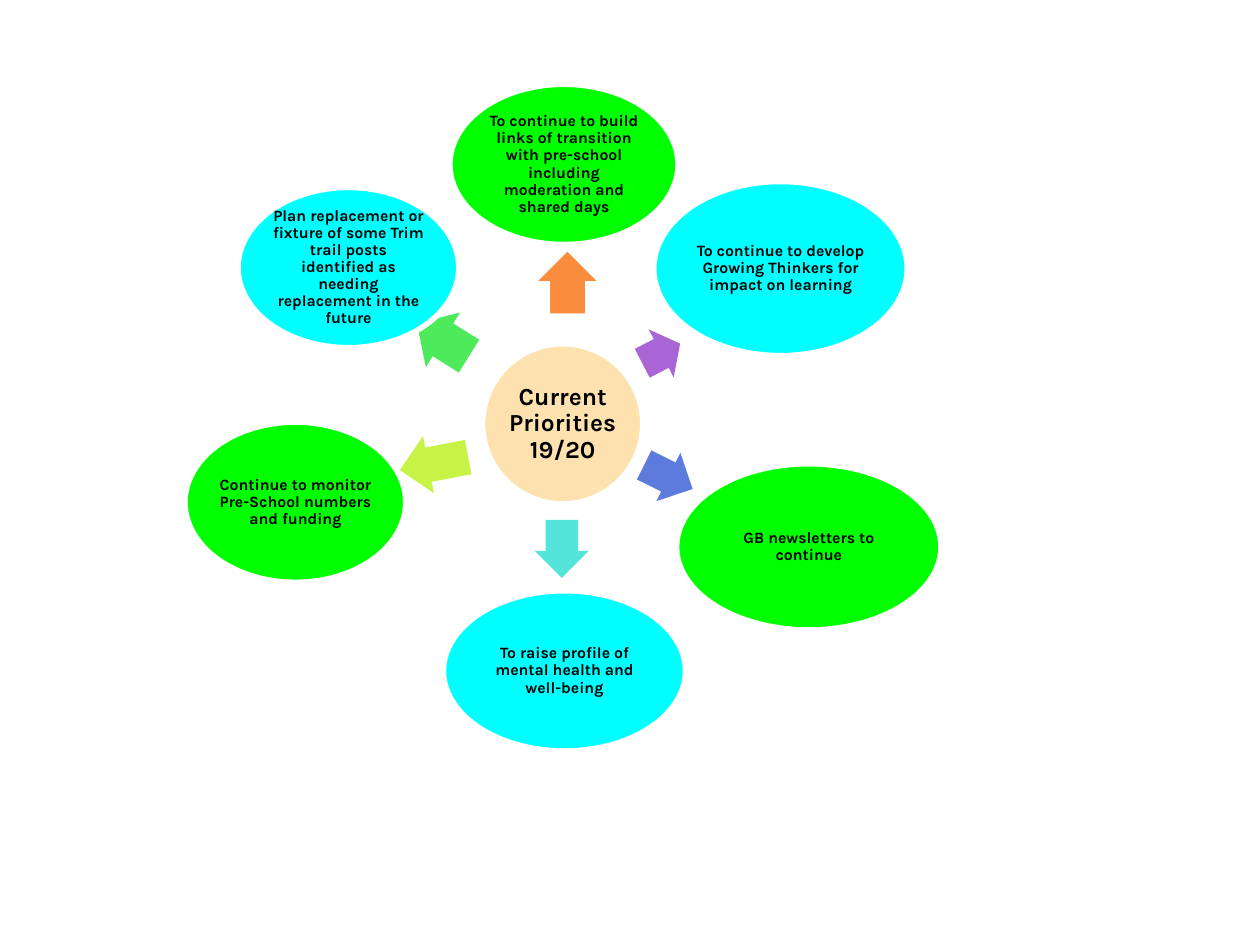
from dataclasses import dataclass

from pptx import Presentation
from pptx.dml.color import RGBColor
from pptx.enum.shapes import MSO_SHAPE
from pptx.enum.text import MSO_ANCHOR, PP_ALIGN
from pptx.util import Cm, Pt

ELLIPSE = MSO_SHAPE.OVAL
ARROW = MSO_SHAPE.RIGHT_ARROW
MIDDLE = MSO_ANCHOR.MIDDLE
CENTER = PP_ALIGN.CENTER


@dataclass(frozen=True)
class Theme:
    font: str = "Karla"
    text: str = "000000"
    outline: str = "FFFFFF"
    hub: str = "FDE2B0"
    green: str = "00FF00"
    cyan: str = "00FFFF"
    orange_arrow: str = "FA8D3D"
    purple_arrow: str = "A965D6"
    blue_arrow: str = "5D7BDD"
    teal_arrow: str = "55E4DA"
    lime_arrow: str = "C6F345"
    green_arrow: str = "4DEB5C"
    hub_size: int = 14
    priority_size: int = 9
    outline_width: float = 3.15
    line_spacing: float = 0.9


def write_text(shape, text, *, font, size, color, line_spacing, inset):
    """Fill a shape with one bold, centred paragraph."""
    frame = shape.text_frame
    frame.word_wrap = True
    frame.vertical_anchor = MIDDLE
    frame.margin_left = frame.margin_right = Cm(inset)
    frame.margin_top = frame.margin_bottom = Cm(inset)
    paragraph = frame.paragraphs[0]
    paragraph.alignment = CENTER
    paragraph.line_spacing = line_spacing
    run = paragraph.add_run()
    run.text = text
    run.font.name = font
    run.font.size = Pt(size)
    run.font.bold = True
    run.font.color.rgb = RGBColor.from_string(color)


class DiagramBuilder:
    def __init__(self, slide, theme):
        self.slide = slide
        self.theme = theme

    def add_filled_shape(self, kind, box, fill):
        shape = self.slide.shapes.add_shape(kind, *map(Cm, box))
        shape.shadow.inherit = False
        shape.fill.solid()
        shape.fill.fore_color.rgb = RGBColor.from_string(fill)
        return shape

    def add_ellipse(self, text, box, fill, size, inset=0.03):
        theme = self.theme
        shape = self.add_filled_shape(ELLIPSE, box, fill)
        shape.line.color.rgb = RGBColor.from_string(theme.outline)
        shape.line.width = Pt(theme.outline_width)
        write_text(shape, text, font=theme.font, size=size, color=theme.text,
                   line_spacing=theme.line_spacing, inset=inset)

    def add_arrow(self, box, angle, fill):
        shape = self.add_filled_shape(ARROW, box, fill)
        shape.line.fill.background()
        shape.adjustments[0] = 0.6
        shape.adjustments[1] = 0.5
        shape.rotation = angle


def main():
    theme = Theme()
    presentation = Presentation()
    presentation.slide_width = Cm(25.4)
    presentation.slide_height = Cm(19.05)
    slide = presentation.slides.add_slide(presentation.slide_layouts[6])
    builder = DiagramBuilder(slide, theme)

    # Arrows from the hub: box in cm, angle, colour
    arrows = [
        ((10.82, 5.11, 1.24, 1.17), 270, theme.orange_arrow),
        ((12.9, 6.58, 0.86, 1.09), 332.6, theme.purple_arrow),
        ((12.93, 9.07, 1.09, 1.09), 26.4, theme.blue_arrow),
        ((10.74, 10.52, 1.17, 1.09), 90, theme.teal_arrow),
        ((8.05, 8.76, 1.4, 1.17), 169.2, theme.lime_arrow),
        ((8.31, 6.2, 1.24, 1.3), 212.1, theme.green_arrow),
    ]
    for box, angle, fill in arrows:
        builder.add_arrow(box, angle, fill)

    # Hub
    builder.add_ellipse("Current Priorities 19/20", (9.73, 6.93, 3.23, 3.23),
                        theme.hub, theme.hub_size, inset=0.05)

    # Priorities, clockwise from the top, in alternating colours
    priorities = [
        ("To continue to build links of transition with pre-school "
         "including moderation and shared days", (9.07, 1.7, 4.6, 3.23)),
        ("To continue to develop Growing Thinkers for impact on learning",
         (13.18, 3.66, 5.11, 3.51)),
        ("GB newsletters to continue", (13.64, 9.35, 5.33, 3.35)),
        ("To raise profile of mental health and well-being",
         (8.94, 11.91, 4.88, 3.23)),
        ("Continue to monitor Pre-School numbers and funding",
         (3.73, 8.51, 4.45, 3.23)),
        ("Plan replacement or fixture of some Trim trail posts identified as "
         "needing replacement in the future", (4.8, 3.78, 4.45, 3.23)),
    ]
    fills = (theme.green, theme.cyan)
    for index, (text, box) in enumerate(priorities):
        builder.add_ellipse(text, box, fills[index % 2], theme.priority_size)

    presentation.save("out.pptx")


if __name__ == "__main__":
    main()
